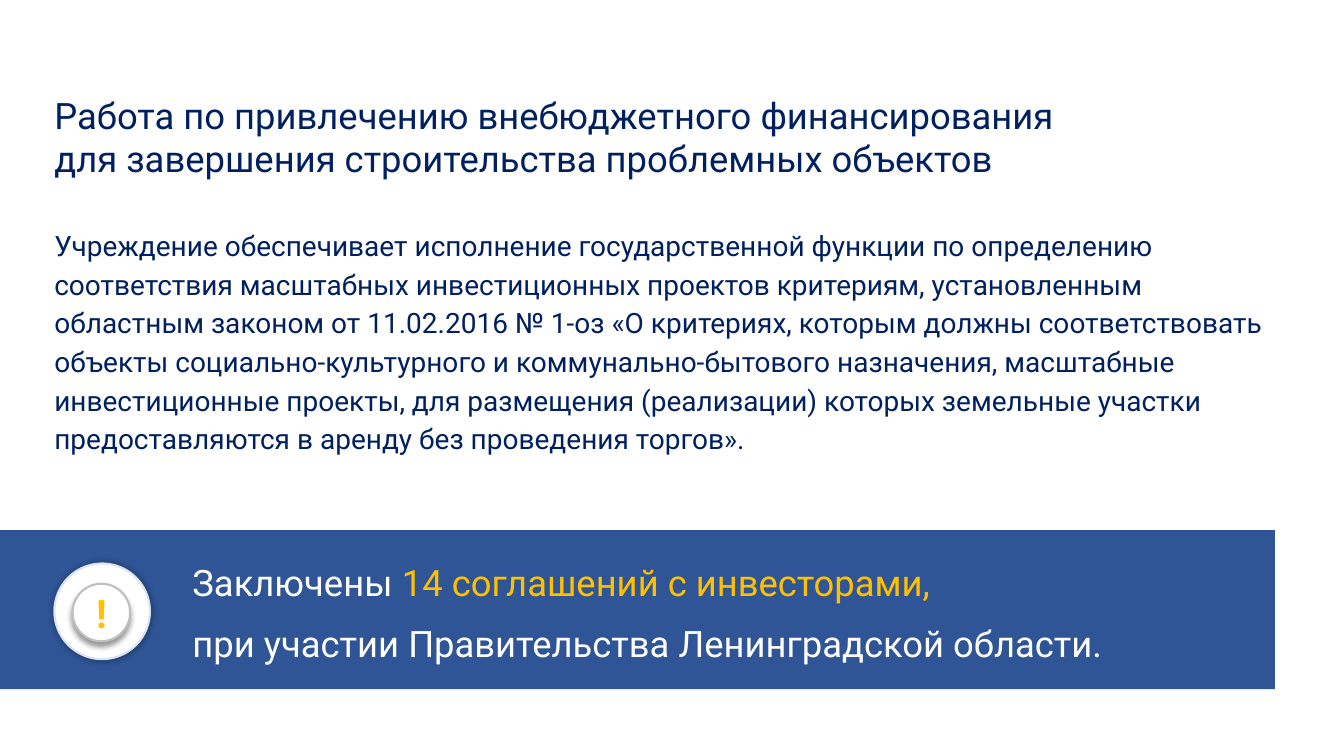
from lxml.etree import SubElement
from pptx import Presentation
from pptx.dml.color import RGBColor as Rgb
from pptx.enum.shapes import MSO_SHAPE as Kind
from pptx.enum.text import MSO_ANCHOR as Anchor, MSO_AUTO_SIZE as Fit, PP_ALIGN as Align
from pptx.oxml.ns import qn
from pptx.util import Cm, Pt

COLORS = {
    "navy": "002060",
    "blue": "2F5597",
    "pale": "DAE3F3",
    "gray": "BFBFBF",
    "gold": "FFC000",
    "white": "FFFFFF",
    "black": "000000",
}
TITLE = [
    "Работа по привлечению внебюджетного финансирования",
    "для завершения строительства проблемных объектов",
]
BODY = (
    "Учреждение обеспечивает исполнение государственной функции по определению "
    "соответствия масштабных инвестиционных проектов критериям, установленным "
    "областным законом от 11.02.2016 № 1-оз «О критериях, которым должны соответствовать "
    "объекты социально-культурного и коммунально-бытового назначения, масштабные "
    "инвестиционные проекты, для размещения (реализации) которых земельные участки "
    "предоставляются в аренду без проведения торгов»."
)


class Deck:
    font = "Roboto"

    def __init__(self, wide, high):
        self.prs = Presentation()
        self.prs.slide_width, self.prs.slide_height = Cm(wide), Cm(high)
        self.slide = self.prs.slides.add_slide(self.prs.slide_layouts[6])

    def color(self, name):
        return Rgb.from_string(COLORS[name])

    def run(self, para, text, size, color, bold=False):
        run = para.add_run()
        run.text = text
        run.font.name, run.font.size, run.font.bold = self.font, Pt(size), bold
        run.font.color.rgb = self.color(color)

    def shape(self, kind, box, fill, line=None):
        shape = self.slide.shapes.add_shape(kind, *map(Cm, box))
        shape.shadow.inherit = False
        shape.fill.solid()
        shape.fill.fore_color.rgb = self.color(fill)
        if line:
            shape.line.color.rgb = self.color(line)
            shape.line.width = Pt(1.5)
        else:
            shape.line.fill.background()
        return shape

    def disc(self, box, line, blur, dist):
        """White circle with a soft shadow that falls straight down."""
        disc = self.shape(Kind.OVAL, box, "white", line)
        effects = disc._element.spPr.find(qn("a:effectLst"))
        shadow = SubElement(
            effects, qn("a:outerShdw"), blurRad=str(Pt(blur)), dist=str(Pt(dist)),
            dir="5400000" if dist else "0", algn="ctr", rotWithShape="0")
        tint = SubElement(shadow, qn("a:srgbClr"), val=COLORS["black"])
        SubElement(tint, qn("a:alpha"), val="40000")
        return disc

    def text(self, box, paras, size, align=Align.LEFT, spacing=None, after=None):
        """Each paragraph is a list of lines, each line a list of (text, color)."""
        frame = self.slide.shapes.add_textbox(*map(Cm, box)).text_frame
        frame.word_wrap, frame.auto_size = True, Fit.SHAPE_TO_FIT_TEXT
        for i, lines in enumerate(paras):
            para = frame.add_paragraph() if i else frame.paragraphs[0]
            para.alignment, para.line_spacing = align, spacing
            if after:
                para.space_after = Pt(after)
            for j, line in enumerate(lines):
                if j:
                    para.add_line_break()
                for words, color in line:
                    self.run(para, words, size, color)


def main():
    deck = Deck(33.87, 19.05)
    deck.shape(Kind.RECTANGLE, (0, 13.36, 32.13, 4.01), "blue")
    deck.text((1.12, 2.21, 30.35, 2.49), [[[(line, "navy")] for line in TITLE]], 26)
    deck.text((1.12, 5.51, 31.01, 6.1), [[[(BODY, "navy")]]], 20, spacing=1.15, after=8)
    deck.text(
        (4.6, 13.82, 30.35, 3.02),
        [
            [[("Заключены ", "white"), ("14 соглашений с инвесторами,", "gold")]],
            [[("при участии Правительства Ленинградской области.", "white")]],
        ],
        26, Align.JUSTIFY, 1.15, 8)
    deck.disc((1.37, 14.2, 2.41, 2.41), "pale", 5, 0)
    badge = deck.disc((1.83, 14.71, 1.45, 1.45), "gray", 4, 3)
    badge.text_frame.vertical_anchor = Anchor.MIDDLE
    mark = badge.text_frame.paragraphs[0]
    mark.alignment = Align.CENTER
    deck.run(mark, "!", 28, "gold", bold=True)
    deck.prs.save("out.pptx")


if __name__ == "__main__":
    main()
